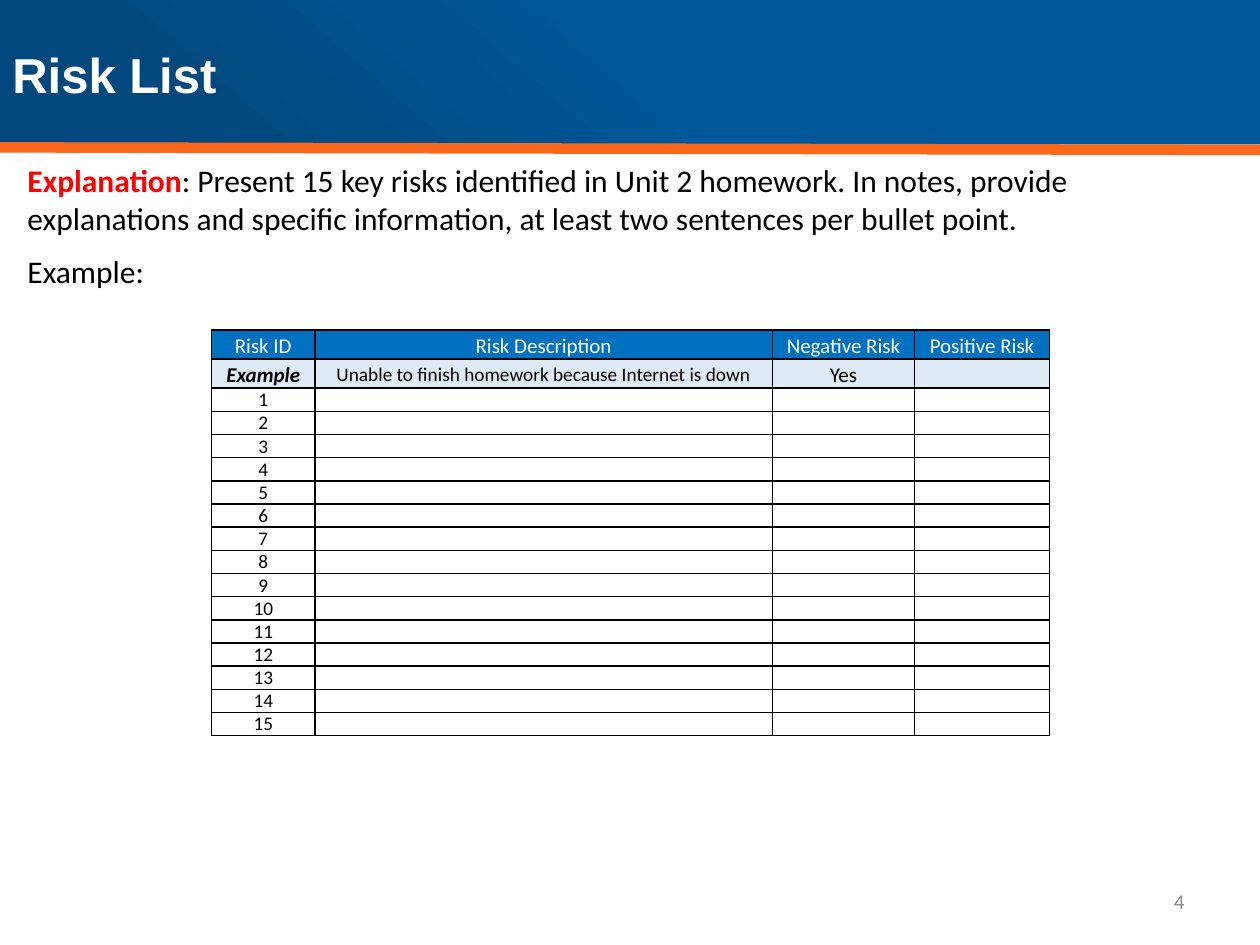
from lxml.etree import SubElement
from pptx import Presentation
from pptx.dml.color import RGBColor
from pptx.enum.shapes import MSO_CONNECTOR as Connector, MSO_SHAPE as Shape
from pptx.enum.text import MSO_ANCHOR as Anchor, MSO_AUTO_SIZE as AutoSize, PP_ALIGN as Align
from pptx.oxml.ns import qn
from pptx.util import Inches, Pt

BLUE = RGBColor(0x00, 0x57, 0x97)
DARK_BLUE = RGBColor(0x00, 0x48, 0x7D)
ORANGE = RGBColor(0xFB, 0x68, 0x1B)
HEADER_BLUE = RGBColor(0x00, 0x70, 0xC0)
PALE_BLUE = RGBColor(0xDE, 0xEA, 0xF6)
WHITE = RGBColor(0xFF, 0xFF, 0xFF)
BLACK = RGBColor(0x00, 0x00, 0x00)
RED = RGBColor(0xFF, 0x00, 0x00)
GRAY = RGBColor(0x8C, 0x8C, 0x8C)

WIDTH, HEIGHT = Inches(10), Inches(7.5)
COLUMN_WIDTHS = [0.82, 3.63, 1.13, 1.07]
TALL_ROW, RISK_ROW = 0.23, 0.184
RISK_COUNT = 15
HEADERS = ["Risk ID", "Risk Description", "Negative Risk", "Positive Risk"]
EXAMPLE = ["Example", "Unable to finish homework because Internet is down", "Yes", ""]


def set_font(font, size, color, name="Calibri", bold=False, italic=False):
    font.size, font.name = Pt(size), name
    font.bold, font.italic = bold, italic
    font.color.rgb = color


def add_banner(slide):
    banner = slide.shapes.add_shape(Shape.RECTANGLE, 0, 0, WIDTH, Inches(1.14))
    banner.line.fill.background()
    banner.fill.gradient()
    banner.fill.gradient_angle = 229
    for stop, position, color in zip(banner.fill.gradient_stops, (0.49, 0.85), (BLUE, DARK_BLUE)):
        stop.position = position
        stop.color.rgb = color
    banner.shadow.inherit = False
    effects = banner._element.spPr.find(qn("a:effectLst"))
    shadow = SubElement(effects, qn("a:outerShdw"), blurRad=str(Pt(3.1)), dist=str(Pt(1.8)),
                        dir="5400000", rotWithShape="0")
    color = SubElement(shadow, qn("a:srgbClr"), val=str(BLACK))
    SubElement(color, qn("a:alpha"), val="35000")


def add_rule(slide):
    rule = slide.shapes.add_connector(Connector.STRAIGHT, 0, Inches(1.17), WIDTH, Inches(1.19))
    rule.line.color.rgb = ORANGE
    rule.line.width = Pt(6)
    SubElement(rule._element.spPr, qn("a:effectLst"))


def add_text_box(slide, left, top, width, height, anchor=Anchor.MIDDLE):
    box = slide.shapes.add_textbox(Inches(left), Inches(top), Inches(width), Inches(height))
    frame = box.text_frame
    frame.word_wrap = True
    frame.vertical_anchor = anchor
    return frame


def add_label(slide, area, text, size, color, align=Align.LEFT, **style):
    paragraph = add_text_box(slide, *area).paragraphs[0]
    paragraph.text = text
    paragraph.alignment = align
    set_font(paragraph.font, size, color, **style)


def add_explanation(slide):
    frame = add_text_box(slide, 0.12, 1.23, 9.77, 1.14, Anchor.TOP)
    frame.auto_size = AutoSize.SHAPE_TO_FIT_TEXT
    explanation = frame.paragraphs[0]
    heading, body = explanation.add_run(), explanation.add_run()
    heading.text = "Explanation"
    body.text = (": Present 15 key risks identified in Unit 2 homework. In notes, provide "
                 "explanations and specific information, at least two sentences per bullet point.")
    set_font(heading.font, 18, RED, bold=True)
    set_font(body.font, 18, BLACK)
    example = frame.add_paragraph()
    example.text = "Example:"
    example.space_before = Pt(9)
    set_font(example.font, 18, BLACK)


def add_borders(cell):
    properties = cell._tc.get_or_add_tcPr()
    for position, side in enumerate(("a:lnL", "a:lnR", "a:lnT", "a:lnB")):
        line = properties.makeelement(qn(side), w=str(Pt(1)))
        fill = SubElement(line, qn("a:solidFill"))
        SubElement(fill, qn("a:srgbClr"), val=str(BLACK))
        properties.insert(position, line)


def fill_cell(cell, text, size, color, background=None, spacing=None, **style):
    cell.margin_left = cell.margin_right = Inches(0.07)
    cell.margin_top = cell.margin_bottom = 0
    paragraph = cell.text_frame.paragraphs[0]
    paragraph.text = text
    paragraph.alignment = Align.CENTER
    paragraph.line_spacing = spacing
    set_font(paragraph.font, size, color, **style)
    if not text:
        paragraph._p.get_or_add_endParaRPr().set("sz", str(size * 100))
    if background is None:
        cell.fill.background()
    else:
        cell.fill.solid()
        cell.fill.fore_color.rgb = background
    add_borders(cell)


def add_risk_table(slide):
    heights = [TALL_ROW] * 2 + [RISK_ROW] * RISK_COUNT
    frame = slide.shapes.add_table(len(heights), len(COLUMN_WIDTHS), Inches(1.68), Inches(2.62),
                                   Inches(sum(COLUMN_WIDTHS)), Inches(sum(heights)))
    table = frame.table
    table.first_row = table.horz_banding = False
    for column, width in zip(table.columns, COLUMN_WIDTHS):
        column.width = Inches(width)
    for row, height in zip(table.rows, heights):
        row.height = Inches(height)
    for column, (header, example) in enumerate(zip(HEADERS, EXAMPLE)):
        first = column == 0
        fill_cell(table.cell(0, column), header, 12, WHITE, HEADER_BLUE, 1.15)
        fill_cell(table.cell(1, column), example, 11 if column == 1 else 12, BLACK, PALE_BLUE,
                  1.15, bold=first, italic=first)
        for risk in range(1, RISK_COUNT + 1):
            fill_cell(table.cell(risk + 1, column), str(risk) if first else "", 11, BLACK)


def main():
    presentation = Presentation()
    presentation.slide_width, presentation.slide_height = WIDTH, HEIGHT
    slide = presentation.slides.add_slide(presentation.slide_layouts[6])
    add_banner(slide)
    add_rule(slide)
    add_label(slide, (0, 0, 7.58, 1.17), "Risk List", 28, WHITE, name="Arial", bold=True)
    add_label(slide, (7.17, 6.95, 2.33, 0.4), "4", 12, GRAY, Align.RIGHT)
    add_explanation(slide)
    add_risk_table(slide)
    presentation.save("out.pptx")


if __name__ == "__main__":
    main()
